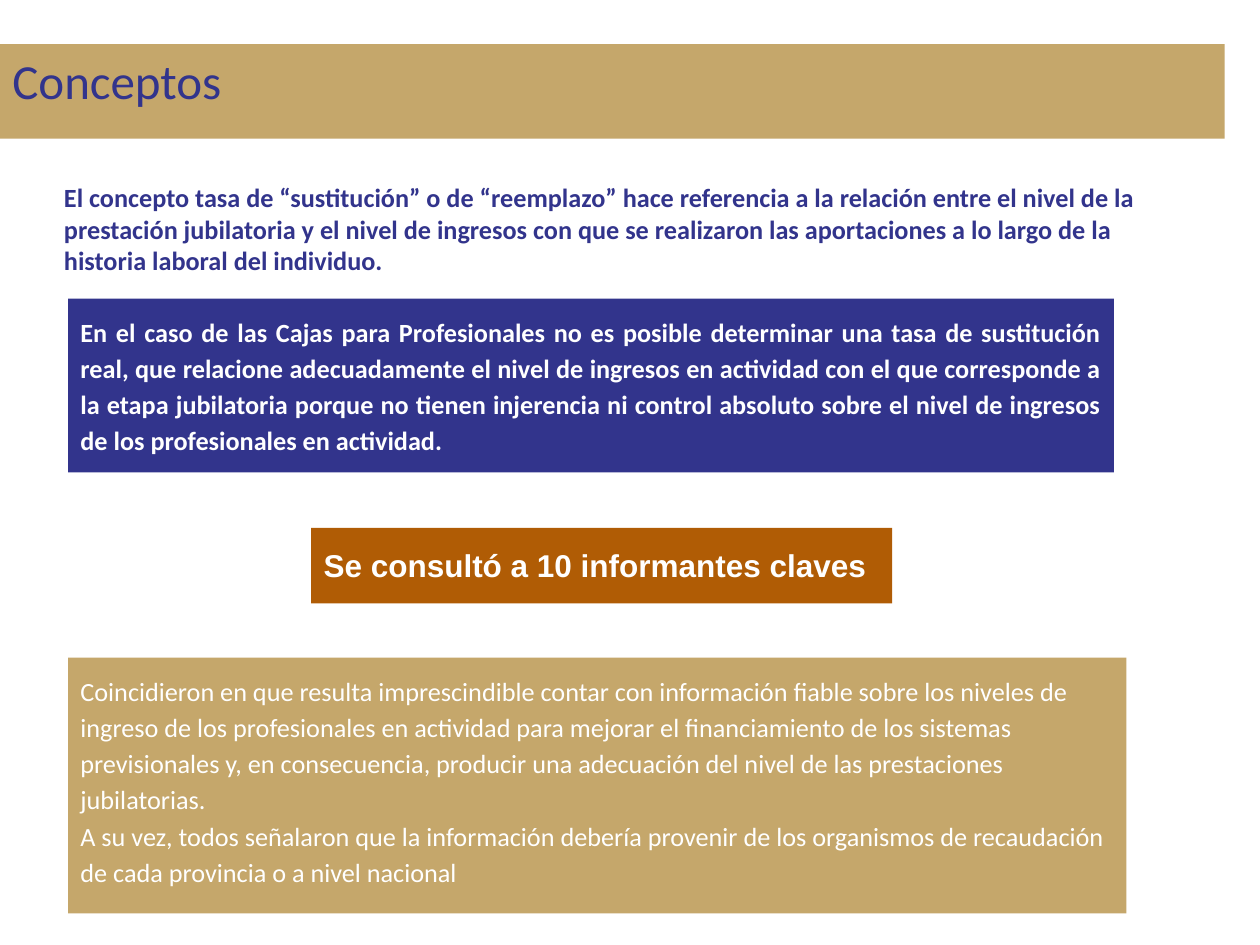
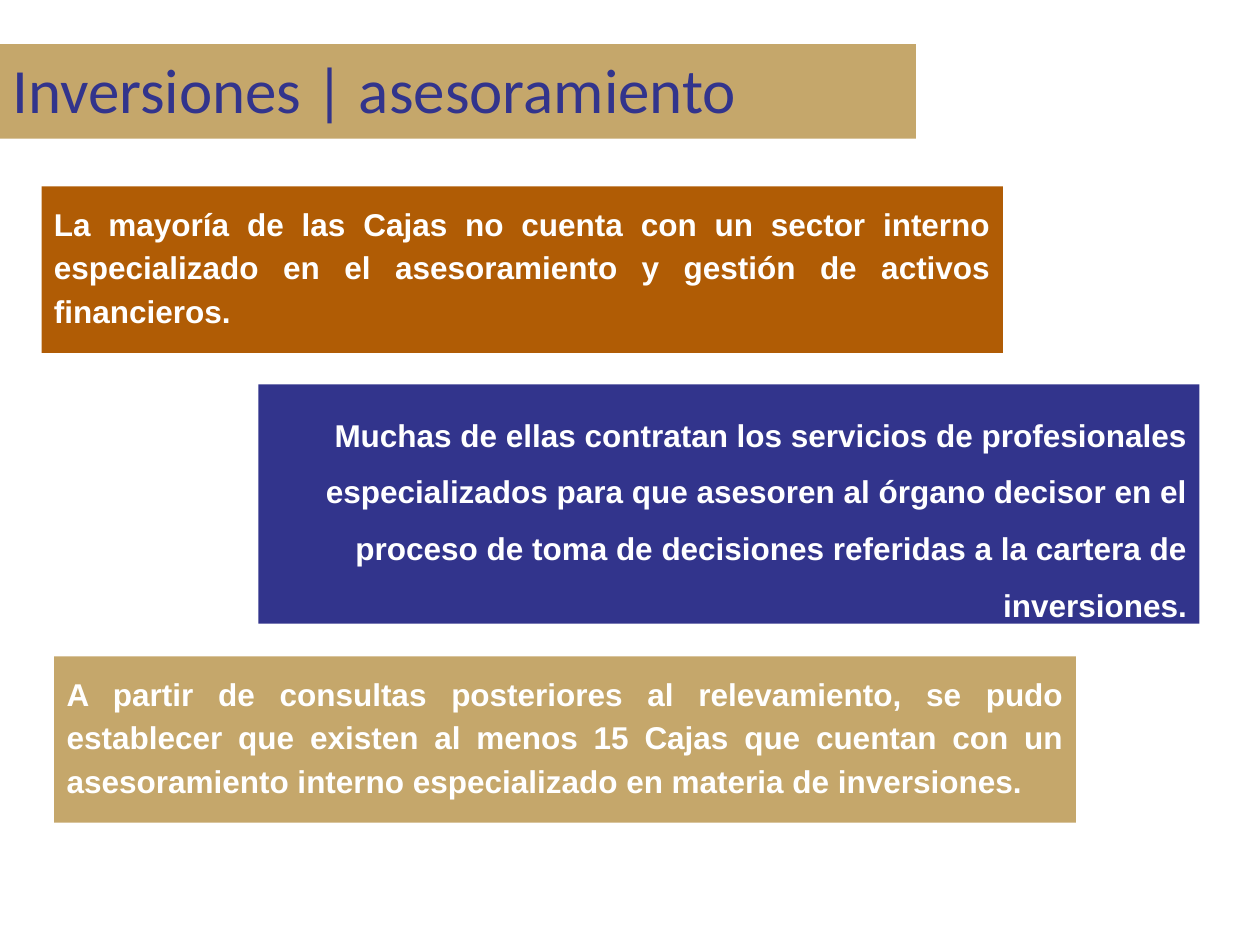
from pptx import Presentation, util as u
from pptx.dml.color import RGBColor
from pptx.enum import shapes, text

# Content: title (text, size, band width), then boxes from top to bottom
C = {"sand": "C5A76B", "navy": "32348C", "rust": "B05C05", "white": "FFFFFF"}
CALIBRI = {"name": "Calibri", "size": u.Pt(15), "bold": True}
ARIAL = {"name": "Arial", "size": u.Pt(18), "bold": True}
LEFT, RIGHT, JUSTIFY = (text.PP_ALIGN.LEFT, text.PP_ALIGN.RIGHT, text.PP_ALIGN.JUSTIFY)
BAND_TOP, BAND_H, INSET = 0.35, 0.75, 0.1

SLIDES = [
    {"title": ("Conceptos", 28, 9.72), "boxes": [
        {"at": (0.41, 1.34, 8.73, 0.86), "fill": None, "font": CALIBRI,
         "color": "navy", "align": LEFT, "spacing": 1.0, "text": [
             "El concepto tasa de “sustitución” o de “reemplazo” hace referencia a la "
             "relación entre el nivel de la prestación jubilatoria y el nivel de ingresos "
             "con que se realizaron las aportaciones a lo largo de la historia laboral "
             "del individuo."]},
        {"at": (0.54, 2.37, 8.3, 1.38), "fill": "navy", "font": CALIBRI, "text": [
            "En el caso de las Cajas para Profesionales no es posible determinar una tasa "
            "de sustitución real, que relacione adecuadamente el nivel de ingresos en "
            "actividad con el que corresponde a la etapa jubilatoria porque no tienen "
            "injerencia ni control absoluto sobre el nivel de ingresos de los "
            "profesionales en actividad."]},
        {"at": (2.47, 4.19, 4.61, 0.6), "fill": "rust", "font": ARIAL, "text": [
            "Se consultó a 10 informantes claves"]},
        {"at": (0.54, 5.22, 8.4, 2.03), "fill": "sand",
         "font": {**CALIBRI, "bold": False}, "align": LEFT, "text": [
             "Coincidieron en que resulta imprescindible contar con información fiable "
             "sobre los niveles de ingreso de los profesionales en actividad para mejorar "
             "el financiamiento de los sistemas previsionales y, en consecuencia, producir "
             "una adecuación del nivel de las prestaciones jubilatorias.",
             "A su vez, todos señalaron que la información debería provenir de los "
             "organismos de recaudación de cada provincia o a nivel nacional"]},
    ]},
    {"title": ("Inversiones | asesoramiento", 36, 7.27), "boxes": [
        {"at": (0.33, 1.48, 7.63, 1.32), "fill": "rust", "font": ARIAL, "text": [
            "La mayoría de las Cajas no cuenta con un sector interno especializado en el "
            "asesoramiento y gestión de activos financieros."]},
        {"at": (2.05, 3.05, 7.47, 1.9), "fill": "navy", "font": ARIAL,
         "align": RIGHT, "spacing": 1.5, "text": [
             "Muchas de ellas contratan los servicios de profesionales especializados para "
             "que asesoren al órgano decisor en el proceso de toma de decisiones referidas "
             "a la cartera de inversiones."]},
        {"at": (0.43, 5.21, 8.11, 1.32), "fill": "sand", "font": ARIAL, "text": [
            "A partir de consultas posteriores al relevamiento, se pudo establecer que "
            "existen al menos 15 Cajas que cuentan con un asesoramiento interno "
            "especializado en materia de inversiones."]},
    ]},
]


def rgb(key):
    return RGBColor.from_string(C[key])


def set_all(target, values):
    for key, value in values.items():
        setattr(target, key, value)


def add_box(s, at, fill, text_lines, font, color="white", align=JUSTIFY,
            spacing=1.15, inset_v=INSET):
    """Text in a filled rectangle, or in a plain text box if fill is None."""
    at = [u.Inches(v) for v in at]
    if fill:
        sp = s.shapes.add_shape(shapes.MSO_SHAPE.RECTANGLE, *at)
        sp.shadow.inherit = False
        sp.fill.solid()
        sp.fill.fore_color.rgb = rgb(fill)
        sp.line.fill.background()
    else:
        sp = s.shapes.add_textbox(*at)
    tf = sp.text_frame
    set_all(tf, {"word_wrap": True, "vertical_anchor": text.MSO_ANCHOR.TOP,
                 "margin_left": u.Inches(INSET), "margin_right": u.Inches(INSET),
                 "margin_top": u.Inches(inset_v), "margin_bottom": u.Inches(inset_v)})
    for i, line in enumerate(text_lines):
        p = tf.add_paragraph() if i else tf.paragraphs[0]
        set_all(p, {"alignment": align, "line_spacing": spacing})
        r = p.add_run()
        r.text = line
        set_all(r.font, font)
        r.font.color.rgb = rgb(color)


def main():
    prs = Presentation()
    set_all(prs, {"slide_width": u.Inches(10), "slide_height": u.Inches(7.5)})
    for data in SLIDES:
        s = prs.slides.add_slide(prs.slide_layouts[6])
        # Title band
        title, size, width = data["title"]
        add_box(s, (0, BAND_TOP, width, BAND_H), "sand", [title],
                {"name": "Calibri", "size": u.Pt(size), "bold": False},
                color="navy", align=LEFT, spacing=1.0, inset_v=INSET / 2)
        # Body boxes
        for box in data["boxes"]:
            options = {k: v for k, v in box.items() if k != "text"}
            add_box(s, text_lines=box["text"], **options)
    prs.save("out.pptx")


if __name__ == "__main__":
    main()
